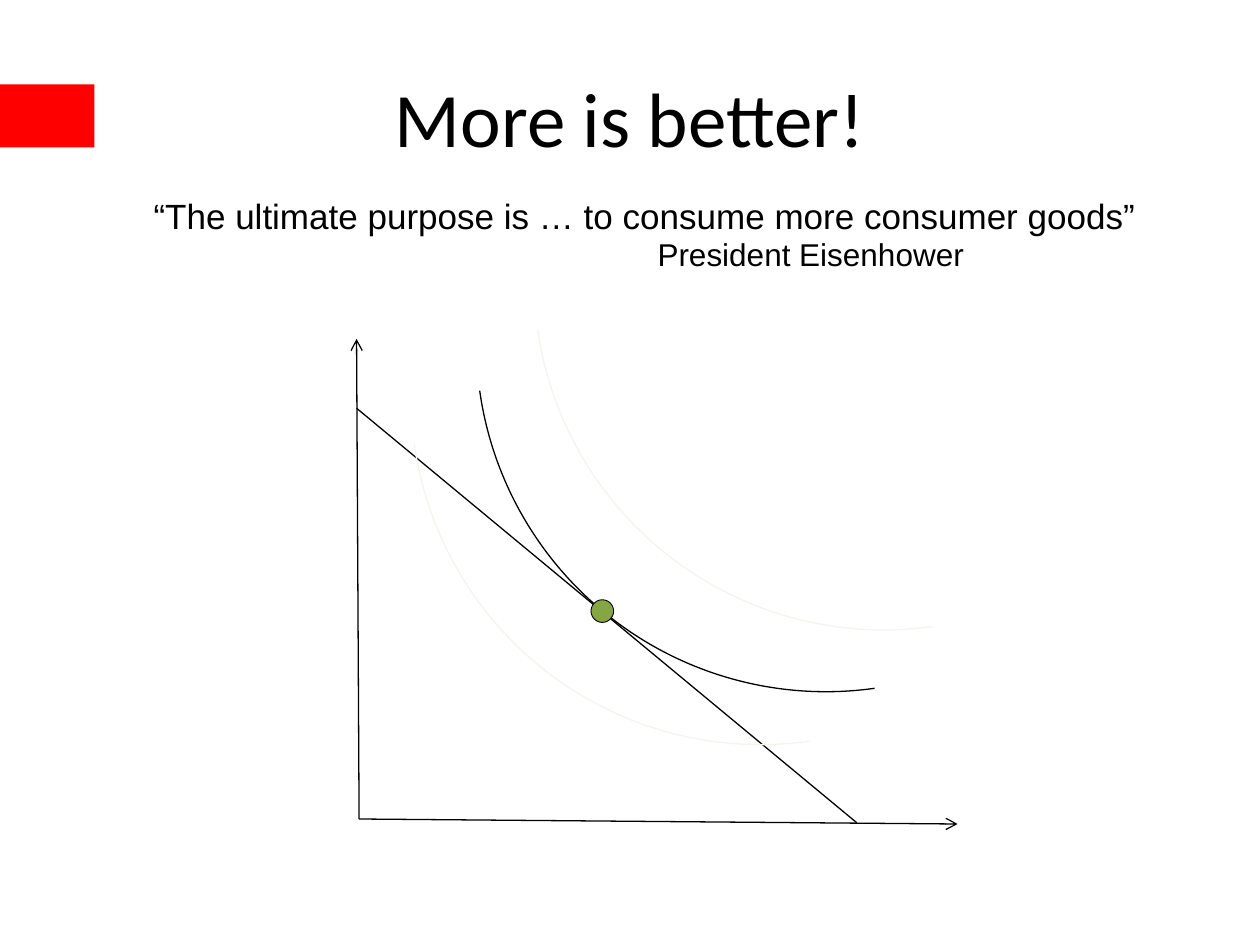
from dataclasses import dataclass

from pptx import Presentation
from pptx import util as u
from pptx.dml.color import RGBColor
from pptx.enum import shapes, text
from pptx.oxml.ns import qn
from lxml import etree


@dataclass(frozen=True)
class Theme:
    ink: RGBColor = RGBColor.from_string("000000")
    faint: RGBColor = RGBColor.from_string("F5F4ED")
    accent: RGBColor = RGBColor.from_string("FF0000")
    optimum: RGBColor = RGBColor.from_string("86A644")
    title_font: str = "Calibri"
    body_font: str = "Arial"
    title_size: int = 44
    quote_size: int = 20
    speaker_size: int = 18
    line_width: float = 0.75


theme = Theme()
deck = Presentation()
deck.slide_width, deck.slide_height = u.Inches(10), u.Inches(7.5)
page = deck.slides.add_slide(deck.slide_layouts[5])
cell = deck.slide_width / 100  # square grid: 100 columns by 75 rows


def grid(*lengths):
    """Turn columns and rows into slide lengths."""
    return [u.Emu(round(length * cell)) for length in lengths]


def add_figure(preset, place, fill=None, line=None, width=theme.line_width):
    figure = page.shapes.add_shape(preset, *grid(*place))
    figure.shadow.inherit = False
    if fill is None:
        figure.fill.background()
    else:
        figure.fill.solid()
        figure.fill.fore_color.rgb = fill
    if line is None:
        figure.line.fill.background()
    else:
        figure.line.color.rgb = line
        figure.line.width = u.Pt(width)
    return figure


# Heading
add_figure(shapes.MSO_SHAPE.RECTANGLE, (0, 6.7, 7.5, 5), fill=theme.accent)
title = page.shapes.title
title.left, title.top, title.width, title.height = grid(5, 3, 90, 12.5)
title.text_frame.vertical_anchor = text.MSO_ANCHOR.MIDDLE
para = title.text_frame.paragraphs[0]
para.alignment = text.PP_ALIGN.CENTER
span = para.add_run()
span.text = "More is better!"
span.font.name, span.font.size = theme.title_font, u.Pt(theme.title_size)
span.font.color.rgb = theme.ink

# Axes and budget line
origin = (28.5, 65)
for start, end, has_arrow in [
    (origin, (76, 65.4), True),
    (origin, (28.3, 26.9), True),
    ((28.3, 32.4), (68, 65.3), False),
]:
    line = page.shapes.add_connector(
        shapes.MSO_CONNECTOR.STRAIGHT, *grid(*start, *end))
    line.line.color.rgb = theme.ink
    line.line.width = u.Pt(theme.line_width)
    if has_arrow:
        outline = line.line._get_or_add_ln()
        etree.SubElement(outline, qn("a:tailEnd"), type="arrow")
    etree.SubElement(line._element.spPr, qn("a:effectLst"))

# Indifference curves
curve_size = 55.5
for left, top, colour in [
    (37.8, -0.6, theme.ink),
    (42.4, -5.5, theme.faint),
    (32.6, 3.6, theme.faint),
]:
    curve = add_figure(shapes.MSO_SHAPE.ARC,
                       (left, top, curve_size, curve_size), line=colour)
    curve.rotation = 172

# Best affordable choice
add_figure(shapes.MSO_SHAPE.OVAL, (46.9, 47.6, 1.8, 1.8),
           fill=theme.optimum, line=theme.ink, width=0.5)

# Quotation
box = page.shapes.add_textbox(*grid(11.2, 15.6, 80.5, 6.7))
frame = box.text_frame
frame.word_wrap = False
frame.auto_size = text.MSO_AUTO_SIZE.SHAPE_TO_FIT_TEXT
for index, (words, size, indent) in enumerate([
    ("“The ultimate purpose is … to consume more consumer goods”",
     theme.quote_size, 0),
    ("President Eisenhower", theme.speaker_size, 40),
]):
    para = frame.add_paragraph() if index else frame.paragraphs[0]
    para.alignment = text.PP_ALIGN.LEFT
    para.line_spacing = 0.8
    if index:
        para.space_before = u.Pt(0.2 * size)
    para._p.get_or_add_pPr().set("marL", str(grid(indent)[0]))
    span = para.add_run()
    span.text = words
    span.font.name, span.font.size = theme.body_font, u.Pt(size)
    span.font.color.rgb = theme.ink

deck.save("out.pptx")
